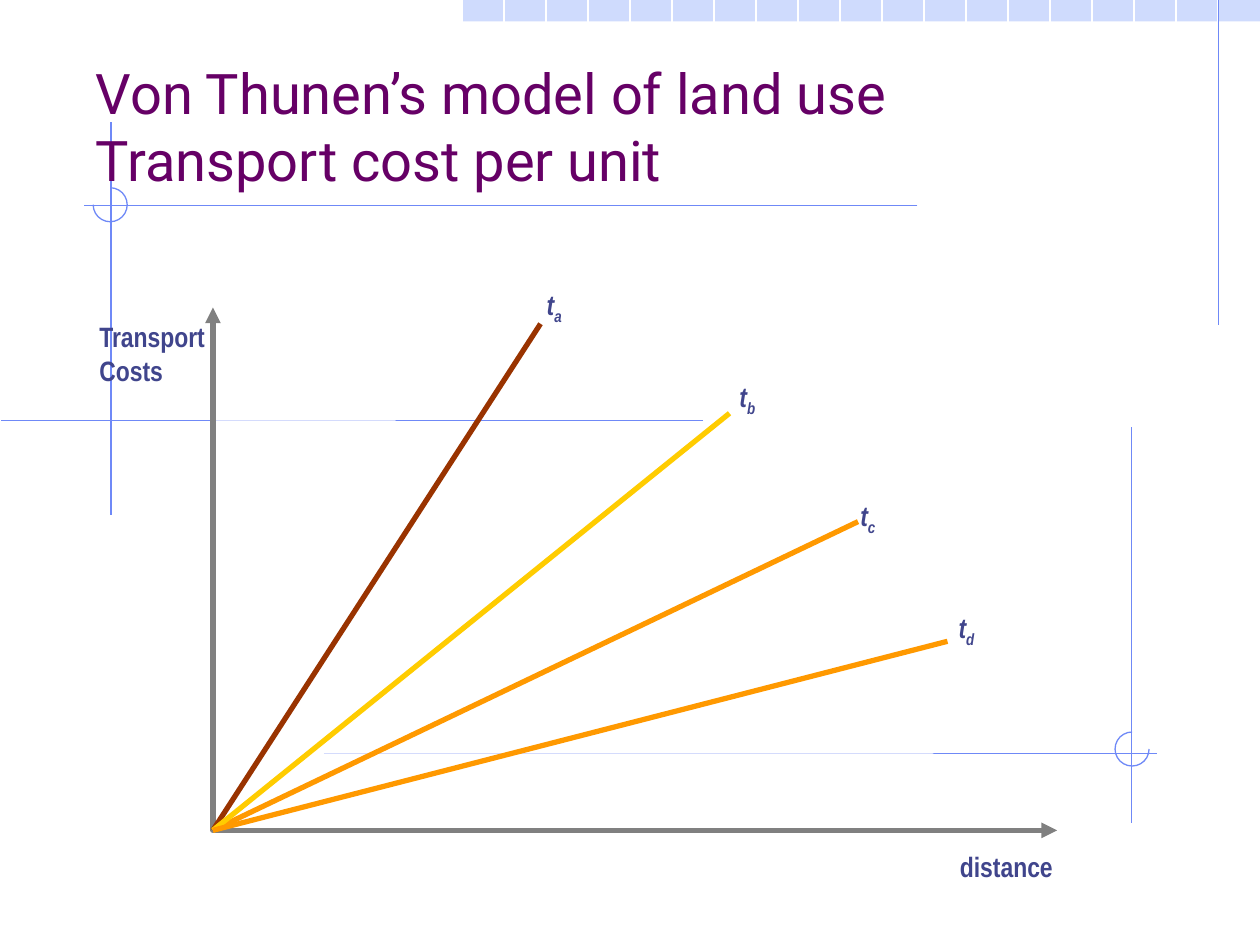
from lxml import etree
from pptx import Presentation
from pptx.dml.color import RGBColor
from pptx.enum import shapes, text
from pptx.oxml import ns
from pptx.util import Inches, Pt

WHITE, BAND, GUIDE, AXIS = "FFFFFF", "CFDBFD", "6F89F7", "808080"
LABEL, TITLE = "40458C", "660066"


def color(hex_string):
    return RGBColor.from_string(hex_string)


def add_line(start, end, line_color, width):
    line = slide.shapes.add_connector(
        shapes.MSO_CONNECTOR.STRAIGHT, *map(Inches, (*start, *end)))
    line.line.color.rgb = color(line_color)
    line.line.width = Pt(width)
    etree.SubElement(line.element.spPr, ns.qn("a:effectLst"))


presentation = Presentation()
presentation.slide_width, presentation.slide_height = Inches(10), Inches(7.5)
slide = presentation.slides.add_slide(presentation.slide_layouts[5])

# Top band, cut into cells by the white grid lines that run down the slide
band = slide.shapes.add_shape(
    shapes.MSO_SHAPE.RECTANGLE, Inches(3.67), 0, Inches(6.33), Inches(0.17))
band.shadow.inherit = False
band.fill.solid()
band.fill.fore_color.rgb = color(BAND)
band.line.fill.background()
for third in range(11, 30):
    add_line((third / 3, 0), (third / 3, 7.5), WHITE, 0.75)

# Thin blue guide lines
for start, end in [
    ((9.67, 0), (9.67, 2.58)),
    ((0.88, 0.97), (0.88, 4.09)),
    ((5.58, 3.34), (0.01, 3.34)),
    ((7.28, 1.63), (0.67, 1.63)),
    ((2.57, 5.98), (9.18, 5.98)),
    ((8.98, 3.39), (8.98, 6.53)),
]:
    add_line(start, end, GUIDE, 0.75)

# Three-quarter circles; an arc adjustment counts 0.6 per degree
for left, top, start_angle, end_angle in [(0.74, 1.49, 270, 180), (8.85, 5.81, 0, 270)]:
    arc = slide.shapes.add_shape(
        shapes.MSO_SHAPE.ARC, Inches(left), Inches(top), Inches(0.27), Inches(0.27))
    arc.shadow.inherit = False
    arc.adjustments[0] = start_angle * 0.6
    arc.adjustments[1] = end_angle * 0.6
    arc.fill.background()
    arc.line.color.rgb = color(GUIDE)
    arc.line.width = Pt(0.75)

# Title, brought in front of the guide lines
title = slide.shapes.title
slide.shapes.element.append(title.element)
title.left, title.top = Inches(0.66), Inches(0.33)
title.width, title.height = Inches(8.5), Inches(1.25)
title.text_frame.text = "Von Thunen’s model of land use\vTransport cost per unit"
title.text_frame.auto_size = text.MSO_AUTO_SIZE.NONE
title.text_frame.vertical_anchor = text.MSO_ANCHOR.BOTTOM
paragraph = title.text_frame.paragraphs[0]
paragraph.alignment = text.PP_ALIGN.LEFT
for run in paragraph.runs:
    run.font.name = "Roboto"
    run.font.size = Pt(32)
    run.font.color.rgb = color(TITLE)

# Axes: one open outline with an arrow at both ends and a translucent fill
origin = (1.69, 6.59)
builder = slide.shapes.build_freeform(Inches(1.69), Inches(2.44))
builder.add_line_segments(
    [(Inches(x), Inches(y)) for x, y in (origin, (8.39, 6.59))], close=False)
axes = builder.convert_to_shape()
axes.shadow.inherit = False
axes.fill.solid()
axes.fill.fore_color.rgb = color(WHITE)
fill_color = axes.element.spPr.find(ns.qn("a:solidFill"))[0]
etree.SubElement(fill_color, ns.qn("a:alpha"), val="70000")
axes.line.color.rgb = color(AXIS)
axes.line.width = Pt(3)
axes_line = axes.element.spPr.find(ns.qn("a:ln"))
for arrow_end in ("a:headEnd", "a:tailEnd"):
    etree.SubElement(axes_line, ns.qn(arrow_end), type="triangle")

# Transport cost lines
for start, end, line_color in [
    (origin, (4.29, 2.57), "993300"),
    ((6.81, 4.14), origin, "FF9900"),
    (origin, (5.79, 3.28), "FFCC00"),
    ((7.52, 5.09), origin, "FF9900"),
]:
    add_line(start, end, line_color, 3)

# Labels: axis names, then line names with a subscript
for label, subscript, left, top, width, height in [
    ("distance", "", 7.52, 6.69, 0.94, 0.37),
    ("Transport\vCosts", "", 0.69, 2.49, 1.05, 0.64),
    ("t", "a", 4.24, 2.23, 0.33, 0.37),
    ("t", "b", 5.77, 2.96, 0.34, 0.37),
    ("t", "c", 6.73, 3.91, 0.47, 0.37),
    ("t", "d", 7.51, 4.8, 0.57, 0.37),
]:
    box = slide.shapes.add_textbox(*map(Inches, (left, top, width, height)))
    box.text_frame.word_wrap = False
    box.text_frame.text = label
    paragraph = box.text_frame.paragraphs[0]
    if subscript:
        run = paragraph.add_run()
        run.text = subscript
        run.font._element.set("baseline", "-25000")
    for run in paragraph.runs:
        run.font.name = "Arial Narrow"
        run.font.size = Pt(16)
        run.font.bold = True
        run.font.italic = bool(subscript)
        run.font.color.rgb = color(LABEL)

presentation.save("out.pptx")
